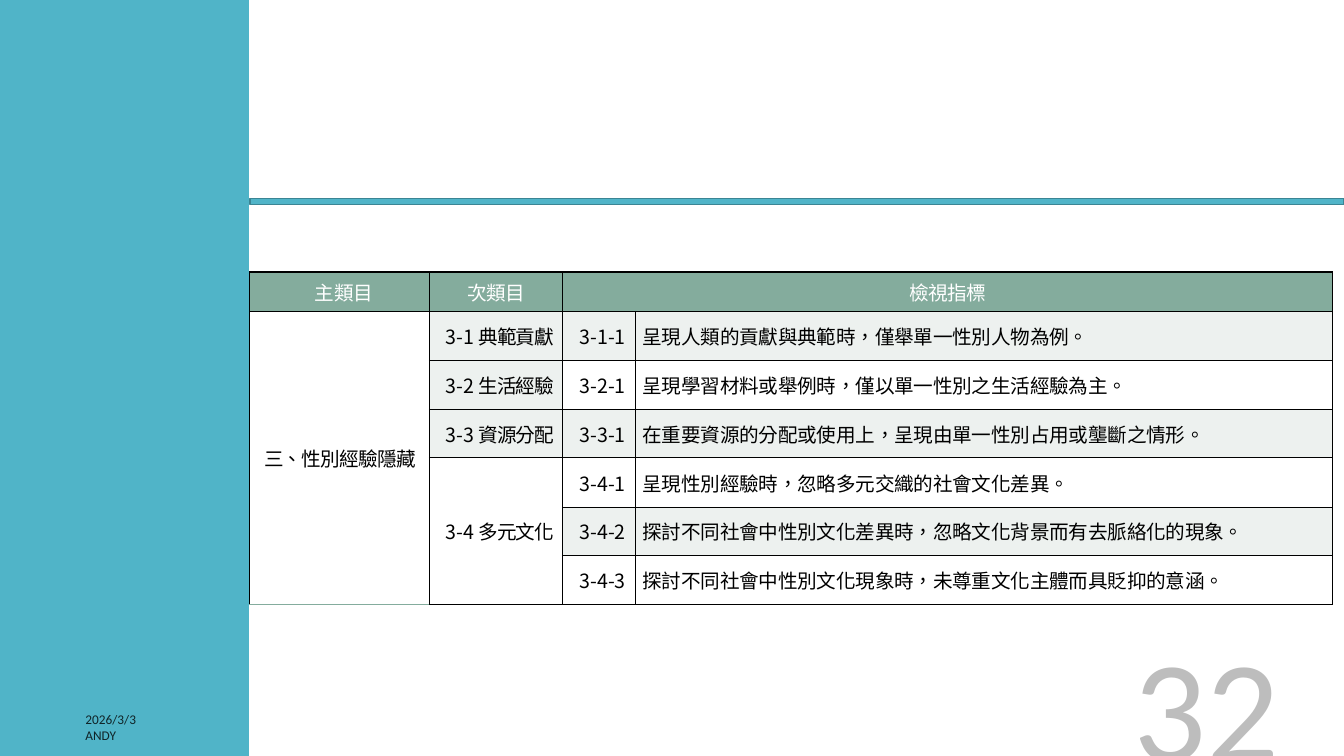
"""Build the slide with the table of review indicators on hidden gender experience."""
from dataclasses import dataclass

from pptx import Presentation
from pptx import util as u
from pptx.dml import color
from pptx.enum import shapes, text
from pptx.oxml import ns
from lxml import etree

PX = 9525
COLORS = {
    "teal": "50B4C8", "teal_dark": "3B8594", "green": "84AC9D",
    "tint": "EDF1EF", "white": "FFFFFF", "black": "000000",
}
LATIN, CJK = "Calibri", "Noto Sans CJK SC"
LEFT, CENTER, RIGHT = text.PP_ALIGN.LEFT, text.PP_ALIGN.CENTER, text.PP_ALIGN.RIGHT
MIDDLE, BOTTOM = text.MSO_ANCHOR.MIDDLE, text.MSO_ANCHOR.BOTTOM
COLUMNS = [171, 127, 69, 664]
ROWS = [38] + [46, 47] * 3


@dataclass
class Bar:
    x: int
    y: int
    w: int
    h: int
    line: str = ""


@dataclass
class Label:
    text: str
    x: int
    y: int
    w: int
    h: int
    size: float = 9.5
    alpha: int = 80
    align: text.PP_ALIGN = LEFT
    anchor: text.MSO_ANCHOR = MIDDLE


@dataclass
class Cell:
    row: int
    col: int
    runs: list[tuple[str, float]]
    fill: str
    color: str = "black"
    align: text.PP_ALIGN = CENTER
    indent: int = 7
    rows: int = 1
    cols: int = 1


BARS = [Bar(238, 189, 1042, 6, "teal_dark"), Bar(0, 0, 237, 720)]
LABELS = [
    Label("2026/3/3", 72, 673, 432, 24),
    Label("ANDY", 72, 688, 528, 24),
    Label("32", 921, 610, 307, 147, 103, 25, RIGHT, BOTTOM),
]
TOPICS = [("典範貢獻", 1), ("生活經驗", 1), ("資源分配", 1), ("多元文化", 3)]
INDICATORS = [
    ("3-1-1", "呈現人類的貢獻與典範時，僅舉單一性別人物為例。"),
    ("3-2-1", "呈現學習材料或舉例時，僅以單一性別之生活經驗為主。"),
    ("3-3-1", "在重要資源的分配或使用上，呈現由單一性別占用或壟斷之情形。"),
    ("3-4-1", "呈現性別經驗時，忽略多元交織的社會文化差異。"),
    ("3-4-2", "探討不同社會中性別文化差異時，忽略文化背景而有去脈絡化的現象。"),
    ("3-4-3", "探討不同社會中性別文化現象時，未尊重文化主體而具貶抑的意涵。"),
]


def px(n: int) -> u.Emu:
    return u.Emu(n * PX)


def rgb(name: str) -> color.RGBColor:
    return color.RGBColor.from_string(COLORS[name])


def add_run(p, content: str, *, size: float, font: str, fill: str = "black",
            spacing: float = 0, alpha: int = 100) -> None:
    r = p.add_run()
    r.text = content
    r.font.size = u.Pt(size)
    r.font.name = font
    r.font.color.rgb = rgb(fill)
    props = r.font._element
    props.set("lang", "zh-TW")
    props.set("spc", str(round(spacing * 100)))
    etree.SubElement(props, ns.qn("a:ea")).set("typeface", CJK)
    if alpha < 100:
        shade = props.find(".//" + ns.qn("a:srgbClr"))
        etree.SubElement(shade, ns.qn("a:alpha")).set("val", str(alpha * 1000))


def add_bar(s, bar: Bar) -> None:
    sp = s.shapes.add_shape(shapes.MSO_SHAPE.RECTANGLE, *map(px, (bar.x, bar.y, bar.w, bar.h)))
    sp.shadow.inherit = False
    sp.fill.solid()
    sp.fill.fore_color.rgb = rgb("teal")
    if bar.line:
        sp.line.color.rgb = rgb(bar.line)
        sp.line.width = u.Pt(1)
    else:
        sp.line.fill.background()


def add_label(s, label: Label) -> None:
    sp = s.shapes.add_textbox(*map(px, (label.x, label.y, label.w, label.h)))
    tf = sp.text_frame
    tf.word_wrap = True
    tf.vertical_anchor = label.anchor
    p = tf.paragraphs[0]
    p.alignment = label.align
    add_run(p, label.text, size=label.size, font=LATIN, alpha=label.alpha)


def set_borders(cell, bottom: str = "black") -> None:
    props = cell._tc.get_or_add_tcPr()
    for side in "LRTB":
        ln = etree.SubElement(props, ns.qn(f"a:ln{side}"), w=str(u.Pt(1)))
        fill = etree.SubElement(ln, ns.qn("a:solidFill"))
        shade = COLORS[bottom if side == "B" else "black"]
        etree.SubElement(fill, ns.qn("a:srgbClr")).set("val", shade)


def fill_cell(table, item: Cell) -> None:
    cell = table.cell(item.row, item.col)
    if item.rows * item.cols > 1:
        cell.merge(table.cell(item.row + item.rows - 1, item.col + item.cols - 1))
    cell.margin_left = cell.margin_right = cell.margin_top = cell.margin_bottom = 0
    cell.vertical_anchor = MIDDLE
    cell.fill.solid()
    cell.fill.fore_color.rgb = rgb(item.fill)
    p = cell.text_frame.paragraphs[0]
    p.alignment = item.align
    p._p.get_or_add_pPr().set("marL", str(px(item.indent)))
    for content, spacing in item.runs:
        add_run(p, content, size=14, font=CJK, fill=item.color, spacing=spacing)


def table_cells() -> list[Cell]:
    cells = [
        Cell(0, 0, [("主類目", -0.2)], "green", "white", indent=8),
        Cell(0, 1, [("次類目", -0.5)], "green", "white", indent=0),
        Cell(0, 2, [("檢視指標", -0.5)], "green", "white", indent=0, cols=2),
        Cell(1, 0, [("三、性別經驗隱藏", -0.5)], "white", indent=1, rows=6),
    ]
    for i, (topic, span) in enumerate(TOPICS, 1):
        runs = [(f"3-{i} ", 0), (topic, -0.7)]
        cells.append(Cell(i, 1, runs, "tint" if span == 1 else "white", rows=span))
    for i, (code, indicator) in enumerate(INDICATORS, 1):
        band = "tint" if i % 2 else "white"
        cells.append(Cell(i, 2, [(code[:-1], 0), (code[-1], -0.5)], band))
        cells.append(Cell(i, 3, [(indicator, -0.2)], band, align=LEFT))
    return cells


def add_indicator_table(s) -> None:
    frame = s.shapes.add_table(len(ROWS), len(COLUMNS),
                               *map(px, (238, 259, sum(COLUMNS), sum(ROWS))))
    table = frame.table
    table.first_row = table.horz_banding = False
    for column, width in zip(table.columns, COLUMNS):
        column.width = px(width)
    for i, height in enumerate(ROWS):
        table.rows[i].height = px(height)
        for j in range(len(COLUMNS)):
            set_borders(table.cell(i, j), "green" if i and j == 0 else "black")
    for item in table_cells():
        fill_cell(table, item)


def main() -> None:
    prs = Presentation()
    prs.slide_width, prs.slide_height = px(1280), px(720)
    s = prs.slides.add_slide(prs.slide_layouts[6])
    for bar in BARS:
        add_bar(s, bar)
    for label in LABELS:
        add_label(s, label)
    add_indicator_table(s)
    prs.save("out.pptx")


if __name__ == "__main__":
    main()
